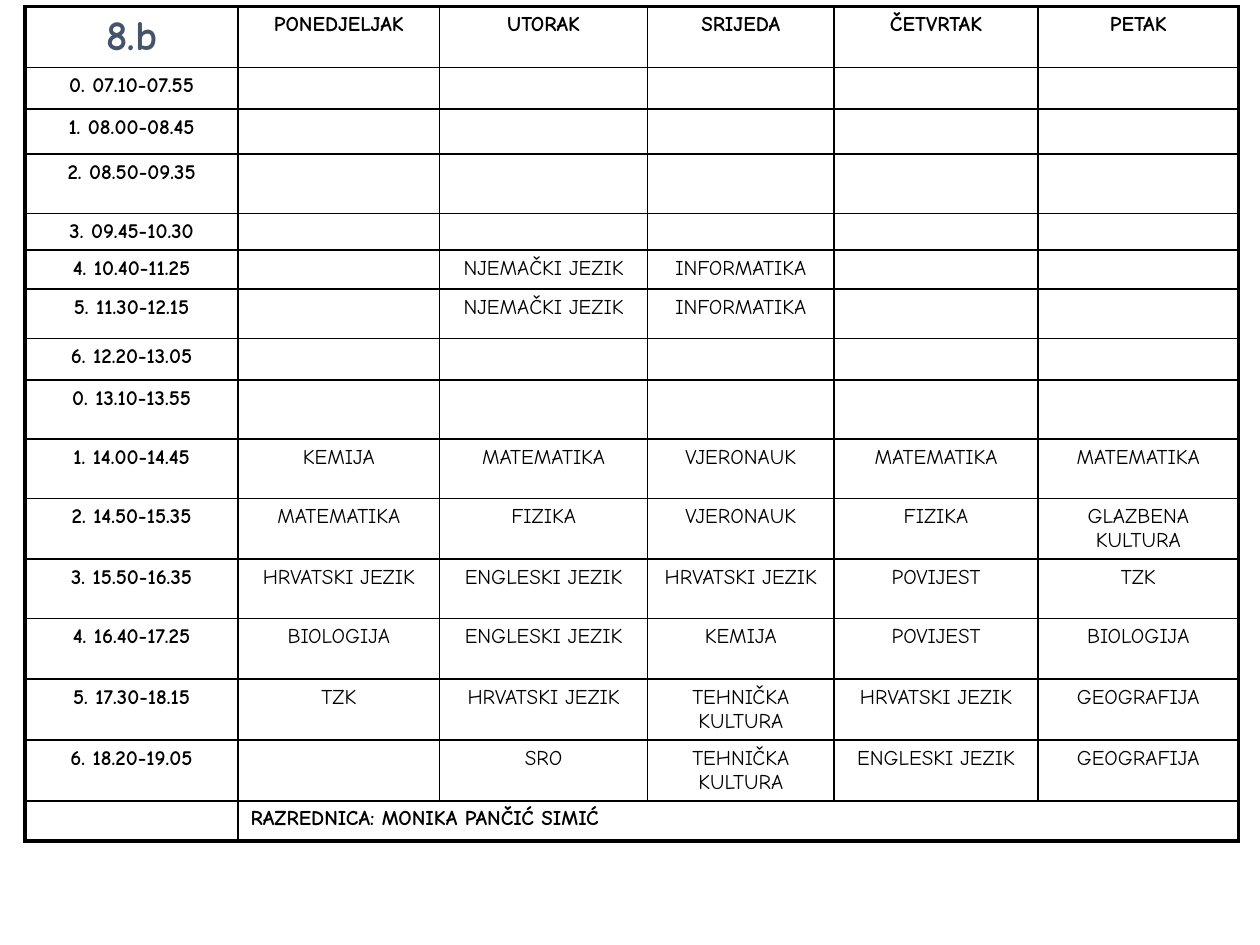
from lxml import etree
from pptx import Presentation
from pptx.dml.color import RGBColor
from pptx.enum.text import PP_ALIGN
from pptx.oxml.ns import qn
from pptx.util import Inches, Pt

CENTER, LEFT = PP_ALIGN.CENTER, PP_ALIGN.LEFT
FONT = "Comic Neue"
BLACK, SLATE = "000000", "44546A"
THIN, THICK = 1, 2.25
BLANK_LAYOUT = 6

COLUMN_WIDTHS = [1.69, 1.6, 1.65, 1.48, 1.62, 1.59]
ROW_HEIGHTS = [0.48, 0.33, 0.36, 0.47, 0.29, 0.31, 0.39, 0.33,
               0.47, 0.47, 0.48, 0.47, 0.48, 0.48, 0.48, 0.32]
TABLE_BOX = (0.2, 0.05, sum(COLUMN_WIDTHS), sum(ROW_HEIGHTS))

FREE = [""] * 5
GERMAN_AND_COMPUTING = ["", "NJEMAČKI JEZIK", "INFORMATIKA", "", ""]
TIMETABLE = [
    ["8.b", "PONEDJELJAK", "UTORAK", "SRIJEDA", "ČETVRTAK", "PETAK"],
    ["0. 07.10-07.55", *FREE],
    ["1. 08.00-08.45", *FREE],
    ["2. 08.50-09.35", *FREE],
    ["3. 09.45-10.30", *FREE],
    ["4. 10.40-11.25", *GERMAN_AND_COMPUTING],
    ["5. 11.30-12.15", *GERMAN_AND_COMPUTING],
    ["6. 12.20-13.05", *FREE],
    ["0. 13.10-13.55", *FREE],
    ["1. 14.00-14.45", "KEMIJA", "MATEMATIKA", "VJERONAUK", "MATEMATIKA", "MATEMATIKA"],
    ["2. 14.50-15.35", "MATEMATIKA", "FIZIKA", "VJERONAUK", "FIZIKA", "GLAZBENA KULTURA"],
    ["3. 15.50-16.35", "HRVATSKI JEZIK", "ENGLESKI JEZIK", "HRVATSKI JEZIK", "POVIJEST", "TZK"],
    ["4. 16.40-17.25", "BIOLOGIJA", "ENGLESKI JEZIK", "KEMIJA", "POVIJEST", "BIOLOGIJA"],
    ["5. 17.30-18.15", "TZK", "HRVATSKI JEZIK", "TEHNIČKA KULTURA", "HRVATSKI JEZIK", "GEOGRAFIJA"],
    ["6. 18.20-19.05", "", "SRO", "TEHNIČKA KULTURA", "ENGLESKI JEZIK", "GEOGRAFIJA"],
    ["", "RAZREDNICA: MONIKA PANČIĆ SIMIĆ", "", "", "", ""],
]
LAST_ROW = len(TIMETABLE) - 1
LAST_COLUMN = len(COLUMN_WIDTHS) - 1


def colour(value):
    return RGBColor.from_string(value)


def set_borders(cell, widths):
    properties = cell._tc.get_or_add_tcPr()
    for side, width in zip("LRTB", widths):
        line = etree.SubElement(properties, qn(f"a:ln{side}"), w=str(Pt(width)))
        fill = etree.SubElement(line, qn("a:solidFill"))
        etree.SubElement(fill, qn("a:srgbClr"), val=BLACK)


def write_cell(cell, text, size, bold, text_colour, alignment):
    para = cell.text_frame.paragraphs[0]
    para.text = text
    para.alignment = alignment
    for span in para.runs:
        span.font.name = FONT
        span.font.size = Pt(size)
        span.font.bold = bold
        span.font.color.rgb = colour(text_colour)
    if not text:
        ending = etree.SubElement(para._p, qn("a:endParaRPr"), sz=str(size * 100))
        etree.SubElement(ending, qn("a:latin"), typeface=FONT)


def add_timetable(page, box):
    frame = page.shapes.add_table(len(TIMETABLE), len(COLUMN_WIDTHS), *map(Inches, box))
    table = frame.table
    table.first_row = table.horz_banding = False
    for column, width in zip(table.columns, COLUMN_WIDTHS):
        column.width = Inches(width)
    for row, height in zip(table.rows, ROW_HEIGHTS):
        row.height = Inches(height)
    table.cell(LAST_ROW, 1).merge(table.cell(LAST_ROW, LAST_COLUMN))

    for row, texts in enumerate(TIMETABLE):
        for column, text in enumerate(texts):
            cell = table.cell(row, column)
            right_column = LAST_COLUMN if cell.is_merge_origin else column
            edges = (column == 0, right_column == LAST_COLUMN, row == 0, row == LAST_ROW)
            set_borders(cell, [THICK if edge else THIN for edge in edges])
            cell.fill.background()
            is_class_name = row == column == 0
            write_cell(
                cell, text,
                size=24 if is_class_name else 12,
                bold=column == 0 or row in (0, LAST_ROW),
                text_colour=SLATE if is_class_name else BLACK,
                alignment=LEFT if row == LAST_ROW else CENTER,
            )


def main():
    deck = Presentation()
    deck.slide_width, deck.slide_height = Inches(10), Inches(7.5)
    page = deck.slides.add_slide(deck.slide_layouts[BLANK_LAYOUT])
    add_timetable(page, TABLE_BOX)
    deck.save("out.pptx")


if __name__ == "__main__":
    main()
